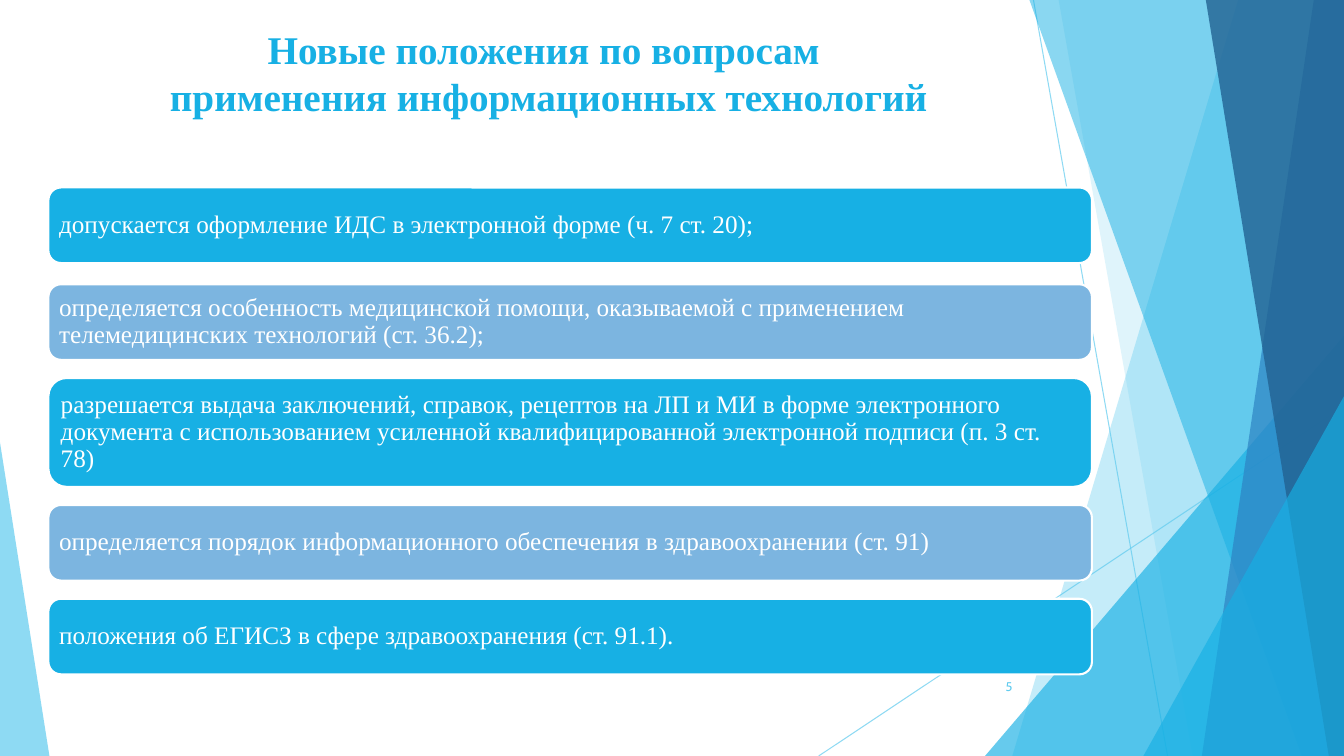
from dataclasses import dataclass

from lxml.etree import SubElement
from pptx import Presentation
from pptx.dml.color import RGBColor
from pptx.enum.shapes import MSO_CONNECTOR, MSO_SHAPE
from pptx.enum.text import MSO_ANCHOR, MSO_AUTO_SIZE, PP_ALIGN
from pptx.oxml.ns import qn
from pptx.shapes.autoshape import Shape
from pptx.slide import Slide
from pptx.text.text import _Paragraph as Paragraph
from pptx.util import Inches, Pt

WIDTH, HEIGHT = 13.33, 7.5
SKY, CYAN, SOFT_BLUE, WHITE = "5FCBEF", "17B0E4", "7CB5E0", "FFFFFF"
SERIF = "Times New Roman"


@dataclass
class Ray:
    start: tuple[float, float]
    end: tuple[float, float]


@dataclass
class Band:
    """Full-height strip from a slanted left edge to the slide's right edge."""
    top_x: float
    bottom_x: float
    color: str
    opacity: int


@dataclass
class Wedge:
    """Triangle standing on the slide's bottom edge."""
    left: float
    width: float
    height: float
    apex: float
    color: str
    opacity: int


@dataclass
class Provision:
    top: float
    height: float
    color: str
    text: str


RAYS = [Ray((10.25, 0), (11.58, HEIGHT)), Ray((WIDTH, 4.03), (8.12, HEIGHT))]
FACETS = [
    Band(12.28, 10.04, SKY, 36),
    Band(10.5, 11.83, SKY, 20),
    Wedge(9.77, 3.56, 4.17, 1, CYAN, 66),
    Band(10.21, 12.91, CYAN, 50),
    Band(13.03, 11.92, "2E83C3", 70),
    Band(11.96, 13.18, "226292", 80),
    Wedge(11.34, 1.99, 3.57, 1, CYAN, 66),
    Wedge(0, 0.49, 3.11, 0, SKY, 70),
]
TITLE_LINES = ["Новые положения по вопросам ", "применения информационных технологий"]
PROVISIONS = [
    Provision(1.86, 0.75, CYAN,
              "допускается оформление ИДС в электронной форме (ч. 7 ст. 20);"),
    Provision(2.82, 0.75, SOFT_BLUE,
              "определяется особенность медицинской помощи, оказываемой с применением "
              "телемедицинских технологий (ст. 36.2);"),
    Provision(3.75, 1.08, CYAN,
              "разрешается выдача заключений, справок, рецептов на ЛП и МИ в форме "
              "электронного документа с использованием усиленной квалифицированной "
              "электронной подписи (п. 3 ст. 78)"),
    Provision(5.01, 0.75, SOFT_BLUE,
              "определяется порядок информационного обеспечения в здравоохранении (ст. 91)"),
    Provision(5.94, 0.75, CYAN,
              "положения об ЕГИСЗ в сфере здравоохранения (ст. 91.1)."),
]


def rgb(color: str) -> RGBColor:
    return RGBColor.from_string(color)


def set_opacity(shape, percent: int) -> None:
    for color in list(shape._element.iter(qn("a:srgbClr"))):
        SubElement(color, qn("a:alpha"), val=str(percent * 1000))


def paint(shape: Shape, color: str) -> None:
    shape.shadow.inherit = False
    shape.fill.solid()
    shape.fill.fore_color.rgb = rgb(color)


def add_span(para: Paragraph, text: str, size: float, font: str, color: str,
             bold: bool = False) -> None:
    span = para.add_run()
    span.text = text
    span.font.size = Pt(size)
    span.font.name = font
    span.font.bold = bold
    span.font.color.rgb = rgb(color)


def draw_ray(page: Slide, ray: Ray) -> None:
    ends = [Inches(value) for value in (*ray.start, *ray.end)]
    line = page.shapes.add_connector(MSO_CONNECTOR.STRAIGHT, *ends)
    line.line.color.rgb = rgb(SKY)
    line.line.width = Pt(0.75)
    set_opacity(line, 70)
    SubElement(line._element.spPr, qn("a:effectLst"))


def draw_facet(page: Slide, facet: Band | Wedge) -> None:
    if isinstance(facet, Band):
        corners = [(WIDTH, 0), (WIDTH, HEIGHT), (facet.bottom_x, HEIGHT)]
        outline = page.shapes.build_freeform(Inches(facet.top_x), 0)
        outline.add_line_segments([(Inches(x), Inches(y)) for x, y in corners])
        shape = outline.convert_to_shape()
    else:
        shape = page.shapes.add_shape(
            MSO_SHAPE.ISOSCELES_TRIANGLE, Inches(facet.left),
            Inches(HEIGHT - facet.height), Inches(facet.width), Inches(facet.height))
        shape.adjustments[0] = facet.apex
    paint(shape, facet.color)
    shape.line.fill.background()
    set_opacity(shape, facet.opacity)


def fill_title(page: Slide) -> None:
    title = page.shapes.title
    title.left, title.top = Inches(0.74), Inches(0.2)
    title.width, title.height = Inches(9.4), Inches(1.44)
    frame = title.text_frame
    frame.auto_size = MSO_AUTO_SIZE.NONE
    frame.vertical_anchor = MSO_ANCHOR.TOP
    para = frame.paragraphs[0]
    para.alignment = PP_ALIGN.CENTER
    for index, text in enumerate(TITLE_LINES):
        if index:
            para.add_line_break()
        add_span(para, text, 28, SERIF, CYAN, bold=True)


def draw_provision(page: Slide, provision: Provision) -> None:
    box = page.shapes.add_shape(
        MSO_SHAPE.ROUNDED_RECTANGLE, Inches(0.48), Inches(provision.top),
        Inches(10.35), Inches(provision.height))
    paint(box, provision.color)
    box.line.color.rgb = rgb(WHITE)
    box.line.width = Pt(1.5)
    frame = box.text_frame
    frame.word_wrap = True
    frame.vertical_anchor = MSO_ANCHOR.MIDDLE
    frame.margin_left = frame.margin_right = Inches(0.07)
    frame.margin_top = frame.margin_bottom = Inches(0.07)
    para = frame.paragraphs[0]
    para.alignment = PP_ALIGN.LEFT
    para.line_spacing = 0.9
    add_span(para, provision.text, 18, SERIF, WHITE)


def draw_page_number(page: Slide) -> None:
    box = page.shapes.add_textbox(Inches(9.39), Inches(6.61), Inches(0.75), Inches(0.4))
    frame = box.text_frame
    frame.word_wrap = True
    frame.vertical_anchor = MSO_ANCHOR.MIDDLE
    para = frame.paragraphs[0]
    para.alignment = PP_ALIGN.RIGHT
    add_span(para, "5", 9, "Cabin", SKY)


def main() -> None:
    deck = Presentation()
    deck.slide_width, deck.slide_height = Inches(WIDTH), Inches(HEIGHT)
    page = deck.slides.add_slide(deck.slide_layouts.get_by_name("Title Only"))
    for ray in RAYS:
        draw_ray(page, ray)
    for facet in FACETS:
        draw_facet(page, facet)
    fill_title(page)
    for provision in PROVISIONS:
        draw_provision(page, provision)
    draw_page_number(page)
    deck.save("out.pptx")


if __name__ == "__main__":
    main()
